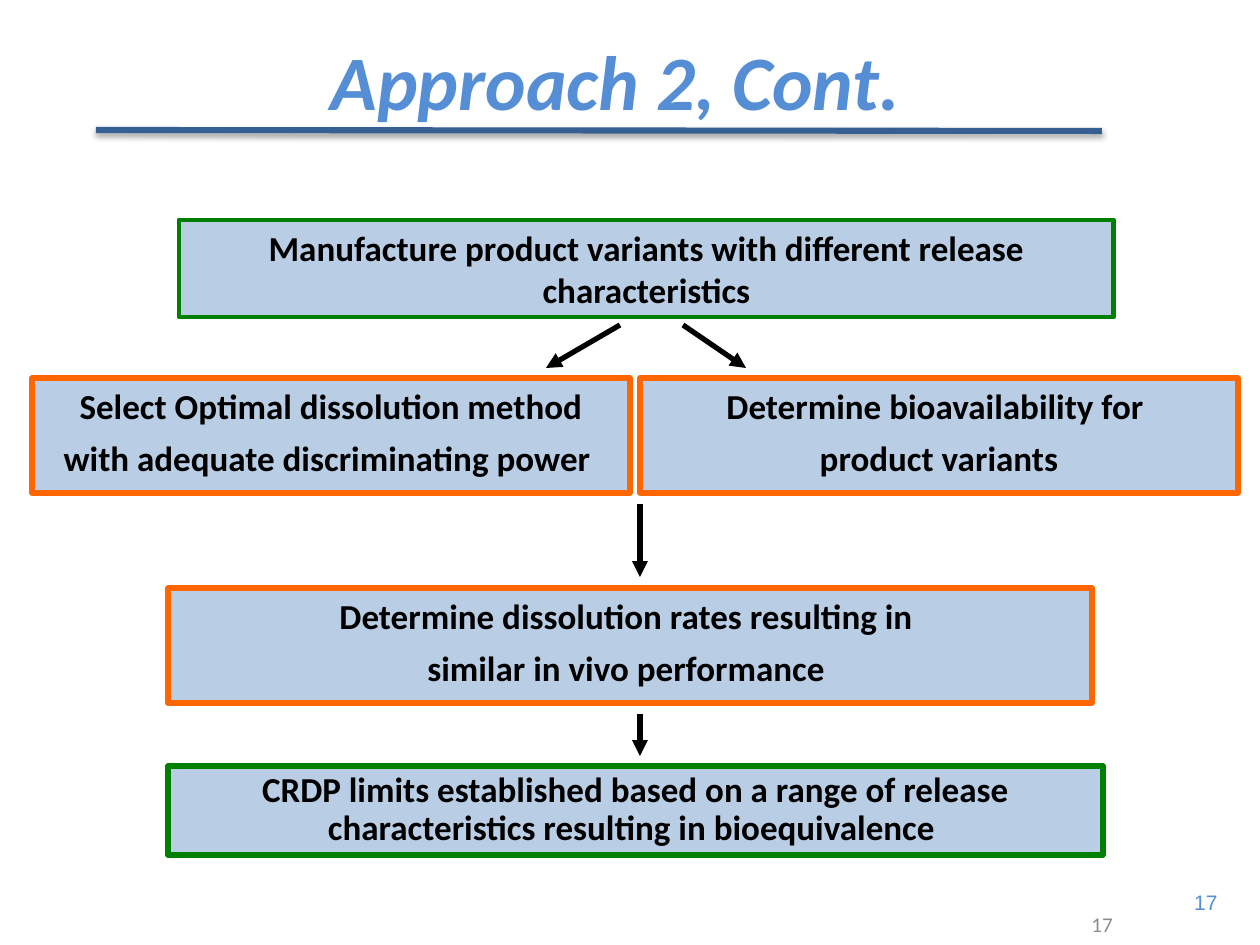
"""Build the "Approach 2, Cont." flowchart slide."""
from typing import NamedTuple

import lxml.etree
import pptx
import pptx.dml.color
import pptx.enum.shapes
import pptx.enum.text
import pptx.oxml.ns
import pptx.util

EMU_PER_PX = 914400 / 126
COLORS = {
    "title": "558ED5",
    "rule": "376092",
    "fill": "B9CDE5",
    "green": "008000",
    "orange": "FF6600",
    "black": "000000",
    "gray": "8C8C8C",
}
ALIGN = pptx.enum.text.PP_ALIGN
ANCHOR = pptx.enum.text.MSO_ANCHOR
qn = pptx.oxml.ns.qn


class Box(NamedTuple):
    x: int
    y: int
    w: int
    h: int
    border: str
    lines: tuple[str, ...]
    border_pt: float = 3
    spacing: float = 1.0


class Line(NamedTuple):
    x1: int
    y1: int
    x2: int
    y2: int
    color: str = "black"
    width: float = 3
    arrow: bool = True
    shadow: bool = False


class Label(NamedTuple):
    x: int
    y: int
    w: int
    h: int
    text: str
    size: int
    color: str
    font: str = "Calibri"
    align: ALIGN = ALIGN.CENTER
    anchor: ANCHOR = ANCHOR.MIDDLE
    wrap: bool = True
    strong: bool = False


BOXES = [
    Box(179, 220, 935, 97, "green",
        ("Manufacture product variants with different release characteristics",), 2.75),
    Box(32, 378, 598, 115, "orange",
        ("Select Optimal dissolution method", "with adequate discriminating power ")),
    Box(640, 378, 598, 115, "orange",
        ("Determine bioavailability for ", "product variants")),
    Box(168, 588, 924, 115, "orange",
        ("Determine dissolution rates resulting in ", "similar in vivo performance ")),
    Box(168, 766, 935, 89, "green",
        ("CRDP limits established based on a range of release "
         "characteristics resulting in bioequivalence ",), spacing=0.9),
]
LINES = [
    Line(620, 325, 546, 368),
    Line(683, 325, 746, 368),
    Line(640, 504, 640, 577),
    Line(640, 714, 640, 756),
    Line(96, 130, 1102, 131, "rule", 3.5, arrow=False, shadow=True),
]
LABELS = [
    Label(49, 1, 1134, 158, "Approach 2, Cont.", 44, "title", strong=True),
    Label(1178, 883, 52, 38, "17", 12, "title", "Arial", ALIGN.RIGHT, ANCHOR.TOP, False),
    Label(955, 908, 294, 32, "17", 12, "gray"),
]


def px(*values: int) -> list[int]:
    return [pptx.util.Emu(round(v * EMU_PER_PX)) for v in values]


def rgb(name: str) -> pptx.dml.color.RGBColor:
    return pptx.dml.color.RGBColor.from_string(COLORS[name])


def style(p, size: int, color: str, font: str = "Calibri", bold: bool = False,
          italic: bool = False, align: ALIGN = ALIGN.CENTER) -> None:
    p.alignment = align
    p.font.size = pptx.util.Pt(size)
    p.font.name = font
    p.font.bold = bold
    p.font.italic = italic
    p.font.color.rgb = rgb(color)


def draw_box(s, box: Box) -> None:
    sp = s.shapes.add_shape(pptx.enum.shapes.MSO_SHAPE.RECTANGLE, *px(*box[:4]))
    sp.shadow.inherit = False
    sp.fill.solid()
    sp.fill.fore_color.rgb = rgb("fill")
    sp.line.color.rgb = rgb(box.border)
    sp.line.width = pptx.util.Pt(box.border_pt)
    tf = sp.text_frame
    tf.word_wrap = True
    tf.vertical_anchor = ANCHOR.TOP
    for i, text in enumerate(box.lines):
        p = tf.add_paragraph() if i else tf.paragraphs[0]
        p.text = text
        p.line_spacing = box.spacing
        p.space_before = pptx.util.Pt(6 if i else 0)
        style(p, 20, "black", bold=True)


def draw_line(s, line: Line) -> None:
    sp = s.shapes.add_connector(pptx.enum.shapes.MSO_CONNECTOR.STRAIGHT, *px(*line[:4]))
    sp.line.color.rgb = rgb(line.color)
    sp.line.width = pptx.util.Pt(line.width)
    sub = lxml.etree.SubElement
    sp_pr = sp.element.spPr
    if line.arrow:
        sub(sp_pr.find(qn("a:ln")), qn("a:tailEnd"), type="triangle")
    effects = sub(sp_pr, qn("a:effectLst"))
    if line.shadow:
        shadow = sub(effects, qn("a:outerShdw"), blurRad="40000", dist="20000",
                     dir="5400000", rotWithShape="0")
        color = sub(shadow, qn("a:srgbClr"), val=COLORS["black"])
        sub(color, qn("a:alpha"), val="38000")


def draw_label(s, label: Label) -> None:
    tf = s.shapes.add_textbox(*px(*label[:4])).text_frame
    tf.word_wrap = label.wrap
    tf.vertical_anchor = label.anchor
    p = tf.paragraphs[0]
    p.text = label.text
    style(p, label.size, label.color, label.font, label.strong, label.strong, label.align)


def main() -> None:
    prs = pptx.Presentation()
    prs.slide_width, prs.slide_height = px(1260, 945)
    s = prs.slides.add_slide(prs.slide_layouts[6])
    for box in BOXES:
        draw_box(s, box)
    for line in LINES:
        draw_line(s, line)
    for label in LABELS:
        draw_label(s, label)
    prs.save("out.pptx")


if __name__ == "__main__":
    main()
